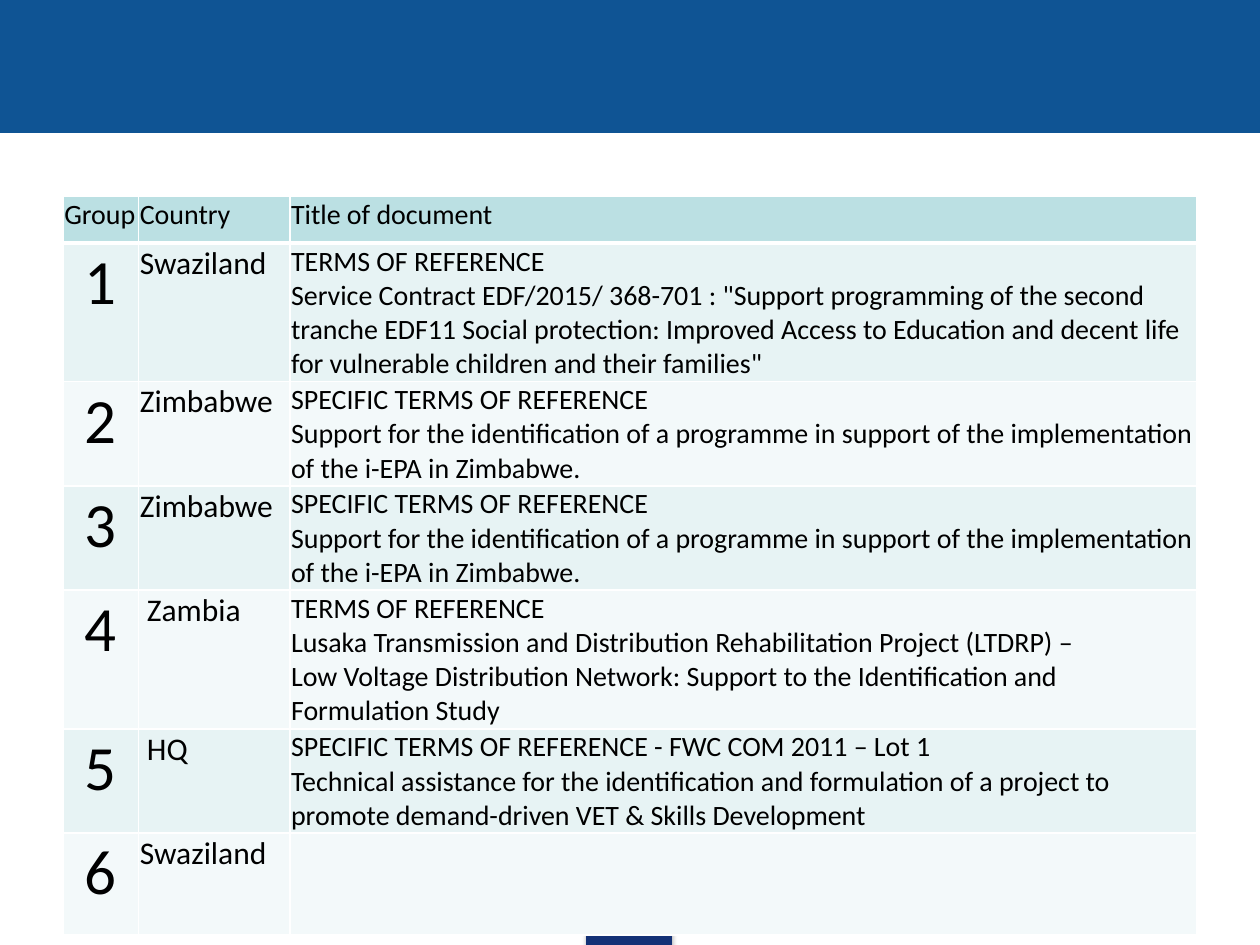
from lxml.etree import SubElement
from pptx import Presentation
from pptx.dml.color import RGBColor
from pptx.enum.shapes import MSO_SHAPE as Shape
from pptx.enum.text import PP_ALIGN as Align
from pptx.oxml.ns import qn
from pptx.util import Pt

BLACK = RGBColor(0x00, 0x00, 0x00)
WHITE = RGBColor(0xFF, 0xFF, 0xFF)
BANNER_BLUE = RGBColor(0x0F, 0x54, 0x94)
TAB_BLUE = RGBColor(0x13, 0x31, 0x76)
HEADER_TEAL = RGBColor(0xBB, 0xE0, 0xE3)
BANDS = (RGBColor(0xE7, 0xF3, 0xF4), RGBColor(0xF3, 0xF9, 0xFA))

COLUMN_WIDTHS = (43.2, 86.4, 518.4)
ROW_HEIGHTS = (26.6, 79.2, 59.6, 59.6, 79.2, 59.6, 58.3)
HEADER_SIZES = (16, 16, 16)
BODY_SIZES = (36, 18, 16)

ZIMBABWE_TITLE = (
    "SPECIFIC TERMS OF REFERENCE",
    "Support for the identification of a programme in support of the "
    "implementation of the i-EPA in Zimbabwe.",
)
HEADINGS = ("Group", "Country", ("Title of document",))
DOCUMENTS = (
    ("Swaziland", (
        "TERMS OF REFERENCE",
        'Service Contract EDF/2015/ 368-701 : "Support programming of the '
        "second tranche EDF11 Social protection: Improved Access to Education "
        'and decent life for vulnerable children and their families"',
    )),
    ("Zimbabwe", ZIMBABWE_TITLE),
    ("Zimbabwe", ZIMBABWE_TITLE),
    (" Zambia", (
        "TERMS OF REFERENCE",
        "Lusaka Transmission and Distribution Rehabilitation Project (LTDRP) –",
        "Low Voltage Distribution Network: Support to the Identification and "
        "Formulation Study",
    )),
    (" HQ", (
        "SPECIFIC TERMS OF REFERENCE - FWC COM 2011 – Lot 1",
        "Technical assistance for the identification and formulation of a "
        "project to promote demand-driven VET & Skills Development",
    )),
    ("Swaziland", ()),
)


class SlideBuilder:
    font_name = "Calibri"
    cell_margins = {
        "margin_left": Pt(0.75),
        "margin_right": Pt(0.75),
        "margin_top": Pt(0.75),
        "margin_bottom": Pt(0),
    }

    def __init__(self, slide):
        self.slide = slide

    def rectangle(self, left, top, width, height, color):
        shape = self.slide.shapes.add_shape(
            Shape.RECTANGLE, Pt(left), Pt(top), Pt(width), Pt(height))
        shape.fill.solid()
        shape.fill.fore_color.rgb = color
        shape.line.color.rgb = color
        shape.line.width = Pt(0.75)
        shape.shadow.inherit = False
        return shape

    def drop_shadow(self, shape, blur, distance, opacity):
        effects = shape.element.spPr.find(qn("a:effectLst"))
        shadow = SubElement(
            effects, qn("a:outerShdw"), blurRad=str(Pt(blur)),
            dist=str(Pt(distance)), dir="5400000", rotWithShape="0")
        color = SubElement(shadow, qn("a:srgbClr"), val=str(BLACK))
        SubElement(color, qn("a:alpha"), val=str(opacity * 1000))

    def borders(self, cell, widths):
        properties = cell._tc.get_or_add_tcPr()
        for side, width in widths.items():
            line = SubElement(properties, qn(f"a:ln{side}"), w=str(Pt(width)))
            fill = SubElement(line, qn("a:solidFill"))
            SubElement(fill, qn("a:srgbClr"), val=str(WHITE))

    def cell(self, cell, lines, size, color, alignment, widths):
        self.borders(cell, widths)
        cell.fill.solid()
        cell.fill.fore_color.rgb = color
        for name, value in self.cell_margins.items():
            setattr(cell, name, value)
        cell.text = "\n".join(lines)
        font_format = {"name": self.font_name, "size": Pt(size), "bold": False}
        for paragraph in cell.text_frame.paragraphs:
            paragraph.alignment = alignment
            for name, value in font_format.items():
                setattr(paragraph.font, name, value)
            paragraph.font.color.rgb = BLACK

    def table(self, left, top, rows):
        table = self.slide.shapes.add_table(
            len(rows), len(COLUMN_WIDTHS), Pt(left), Pt(top),
            Pt(sum(COLUMN_WIDTHS)), Pt(sum(ROW_HEIGHTS))).table
        for column, width in zip(table.columns, COLUMN_WIDTHS):
            column.width = Pt(width)
        for row, height in zip(table.rows, ROW_HEIGHTS):
            row.height = Pt(height)
        for r, row in enumerate(rows):
            header = r == 0
            sizes = HEADER_SIZES if header else BODY_SIZES
            color = HEADER_TEAL if header else BANDS[(r - 1) % 2]
            widths = {"L": 1, "R": 1, "T": 3 if r == 1 else 1,
                      "B": 3 if header else 1}
            for c, content in enumerate(row):
                lines = (content,) if isinstance(content, str) else content
                centred = c == 0 and not header
                self.cell(table.cell(r, c), lines, sizes[c], color,
                          Align.CENTER if centred else Align.LEFT, widths)


def main():
    presentation = Presentation()
    presentation.slide_width, presentation.slide_height = Pt(720), Pt(540)
    builder = SlideBuilder(
        presentation.slides.add_slide(presentation.slide_layouts[6]))
    footer_tab = builder.rectangle(335.5, 524.2, 48.2, 15.8, TAB_BLUE)
    builder.drop_shadow(footer_tab, 3.1, 1.8, 35)
    builder.rectangle(0, 0, 720, 75.6, BANNER_BLUE)
    rows = [HEADINGS] + [
        (str(number), country, title)
        for number, (country, title) in enumerate(DOCUMENTS, 1)]
    builder.table(36, 112.3, rows)
    presentation.save("out.pptx")


if __name__ == "__main__":
    main()
